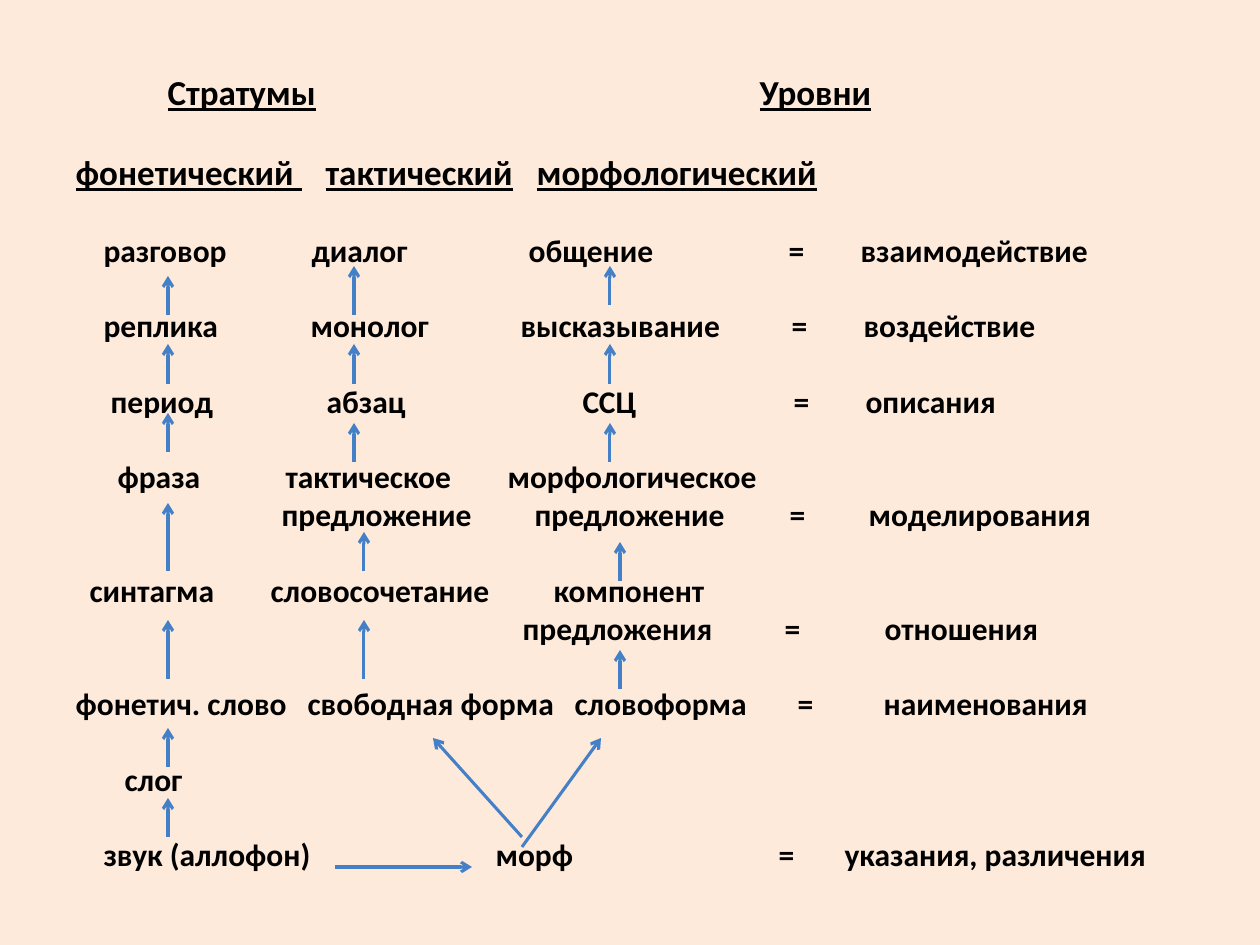
"""Build a slide relating language strata to levels of communication."""
from typing import NamedTuple

from lxml import etree
from pptx import Presentation
from pptx.dml.color import RGBColor
from pptx.enum.shapes import MSO_CONNECTOR
from pptx.enum.text import MSO_ANCHOR, MSO_AUTO_SIZE, PP_ALIGN
from pptx.oxml.ns import qn
from pptx.util import Emu, Pt

STRAIGHT = MSO_CONNECTOR.STRAIGHT
MIDDLE = MSO_ANCHOR.MIDDLE
NO_AUTOFIT = MSO_AUTO_SIZE.NONE
LEFT = PP_ALIGN.LEFT

PEACH = RGBColor(0xFD, 0xEA, 0xDA)
BLUE = RGBColor(0x44, 0x80, 0xC8)
BLACK = RGBColor(0, 0, 0)

PX_PER_INCH = 126
TITLE_LEFT, TITLE_TOP, TITLE_WIDTH, TITLE_HEIGHT = 63, 38, 1134, 868
TEXT_LEFT = 76
HEADING_FORMAT = {"size": Pt(20), "underline": True}
ROW_FORMAT = {"size": Pt(18), "underline": False}
COMMON_FORMAT = {"name": "Calibri", "bold": True}
ROW_PITCH = Pt(21.6)
HEADING_PITCH = Pt(24)


class Cell(NamedTuple):
    x: int
    text: str


class Row(NamedTuple):
    cells: list[Cell]
    gap_above: bool = True
    heading: bool = False


class Arrow(NamedTuple):
    x1: int
    y1: int
    x2: int
    y2: int


ROWS = [
    Row([Cell(168, "Стратумы"), Cell(760, "Уровни")], False, True),
    Row([Cell(76, "фонетический "), Cell(326, "тактический"),
         Cell(537, "морфологический")], heading=True),
    Row([Cell(104, "разговор"), Cell(312, "диалог"), Cell(529, "общение"),
         Cell(789, "="), Cell(861, "взаимодействие")]),
    Row([Cell(104, "реплика"), Cell(311, "монолог"), Cell(521, "высказывание"),
         Cell(792, "="), Cell(864, "воздействие")]),
    Row([Cell(111, "период"), Cell(327, "абзац"), Cell(583, "ССЦ"),
         Cell(794, "="), Cell(866, "описания")]),
    Row([Cell(118, "фраза"), Cell(286, "тактическое"), Cell(508, "морфологическое")]),
    Row([Cell(282, "предложение"), Cell(535, "предложение"),
         Cell(790, "="), Cell(869, "моделирования")], False),
    Row([Cell(90, "синтагма"), Cell(271, "словосочетание"), Cell(554, "компонент")]),
    Row([Cell(523, "предложения"), Cell(785, "="), Cell(885, "отношения")], False),
    Row([Cell(76, "фонетич. слово"), Cell(308, "свободная форма"),
         Cell(575, "словоформа"), Cell(798, "="), Cell(884, "наименования")]),
    Row([Cell(125, "слог")]),
    Row([Cell(104, "звук (аллофон)"), Cell(496, "морф"),
         Cell(779, "="), Cell(845, "указания, различения")]),
]

RISES = {
    168: [(315, 276), (384, 344), (452, 413), (571, 503), (679, 620), (767, 728), (837, 798)],
    354: [(315, 266), (384, 344), (462, 423)],
    364: [(571, 532), (679, 620)],
    610: [(305, 266), (384, 344), (462, 423)],
    620: [(581, 542), (689, 650)],
}
MORPH_ARROWS = [
    Arrow(335, 867, 472, 867),
    Arrow(522, 837, 433, 738),
    Arrow(522, 847, 601, 738),
]


def px(length: int) -> Emu:
    """Turn pixels into EMU."""
    return Emu(round(length * 914400 / PX_PER_INCH))


def apply_format(target, values: dict) -> None:
    """Set each named attribute on the target."""
    for name, value in values.items():
        setattr(target, name, value)


def write_row(paragraph, row: Row) -> None:
    """Write one row of cells, each at its own tab stop."""
    apply_format(paragraph, {
        "alignment": LEFT,
        "line_spacing": HEADING_PITCH if row.heading else ROW_PITCH,
        "space_before": ROW_PITCH if row.gap_above else Pt(0),
    })
    stops = etree.SubElement(paragraph._p.get_or_add_pPr(), qn("a:tabLst"))
    row_format = HEADING_FORMAT if row.heading else ROW_FORMAT
    for cell in row.cells:
        pieces = [(cell.text, row_format)]
        if cell.x > TEXT_LEFT:
            etree.SubElement(stops, qn("a:tab"), pos=str(px(cell.x - TEXT_LEFT)), algn="l")
            pieces.insert(0, ("\t", ROW_FORMAT))
        for text, piece_format in pieces:
            run = paragraph.add_run()
            run.text = text
            apply_format(run.font, COMMON_FORMAT | piece_format)
            run.font.color.rgb = BLACK


def write_table_of_strata(title) -> None:
    """Place the title and fill it with the rows."""
    apply_format(title, {"left": px(TITLE_LEFT), "top": px(TITLE_TOP),
                         "width": px(TITLE_WIDTH), "height": px(TITLE_HEIGHT)})
    frame = title.text_frame
    apply_format(frame, {"word_wrap": True, "auto_size": NO_AUTOFIT,
                         "vertical_anchor": MIDDLE})
    for index, row in enumerate(ROWS):
        write_row(frame.add_paragraph() if index else frame.paragraphs[0], row)


def draw_arrow(shapes, arrow: Arrow) -> None:
    """Draw a blue line with an open head at its end."""
    connector = shapes.add_connector(STRAIGHT, *map(px, arrow))
    connector.line.color.rgb = BLUE
    connector.line.width = Pt(1.75)
    etree.SubElement(connector.line._get_or_add_ln(), qn("a:tailEnd"), type="arrow")
    etree.SubElement(connector._element.spPr, qn("a:effectLst"))


def main() -> None:
    """Build and save the slide."""
    deck = Presentation()
    deck.slide_width, deck.slide_height = px(1260), px(945)
    slide = deck.slides.add_slide(deck.slide_layouts[5])
    slide.background.fill.solid()
    slide.background.fill.fore_color.rgb = PEACH
    write_table_of_strata(slide.shapes.title)
    rises = [Arrow(x, start, x, end) for x, spans in RISES.items() for start, end in spans]
    for arrow in rises + MORPH_ARROWS:
        draw_arrow(slide.shapes, arrow)
    deck.save("out.pptx")


if __name__ == "__main__":
    main()
